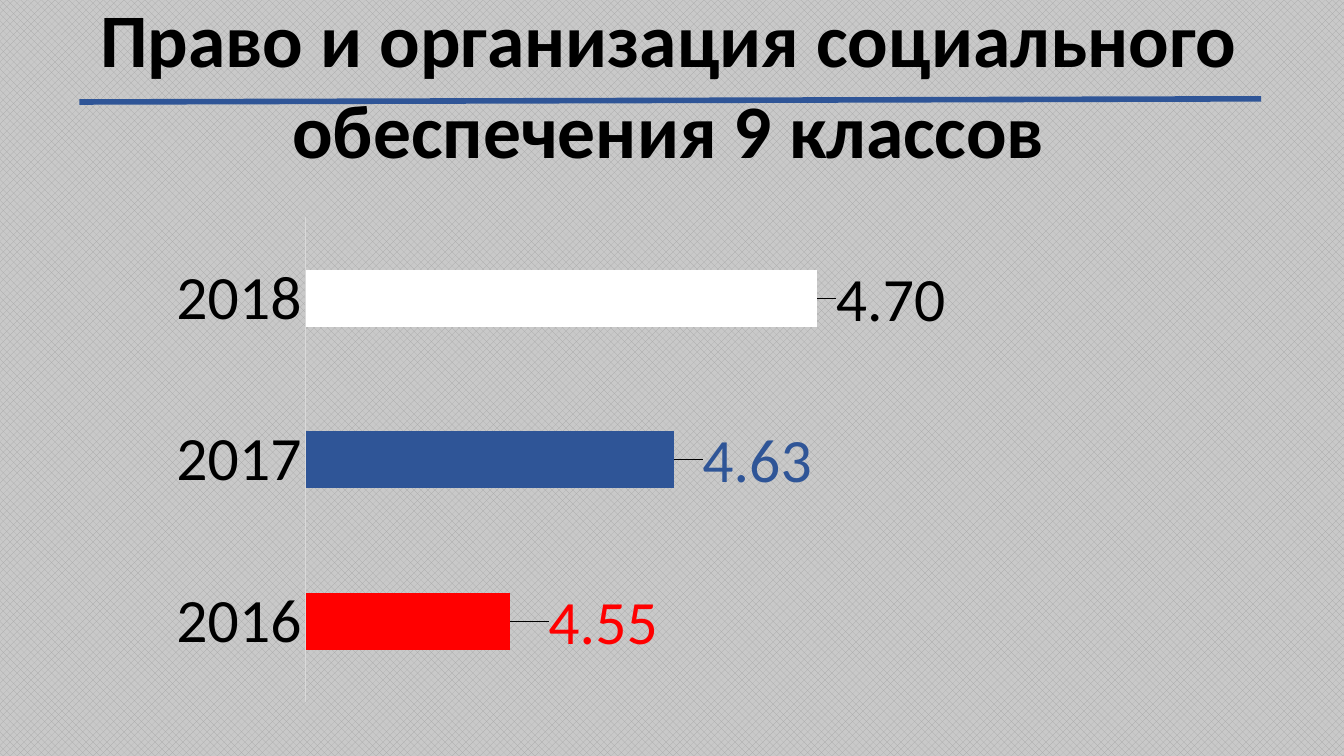
"""Builds a slide with a bar chart of average grades by year."""
from lxml import etree
from pptx import Presentation
from pptx.chart.data import CategoryChartData
from pptx.dml.color import RGBColor
from pptx.enum.chart import XL_CHART_TYPE, XL_LABEL_POSITION, XL_TICK_MARK
from pptx.enum.dml import MSO_PATTERN
from pptx.enum.shapes import MSO_CONNECTOR
from pptx.enum.text import MSO_AUTO_SIZE, PP_ALIGN
from pptx.oxml import parse_xml
from pptx.oxml.ns import qn
from pptx.util import Cm, Pt

BAR = XL_CHART_TYPE.BAR_CLUSTERED
OUTSIDE_END = XL_LABEL_POSITION.OUTSIDE_END
NO_TICK = XL_TICK_MARK.NONE
HALF_PATTERN = MSO_PATTERN.PERCENT_50
STRAIGHT = MSO_CONNECTOR.STRAIGHT
FIT_SHAPE = MSO_AUTO_SIZE.SHAPE_TO_FIT_TEXT
CENTER = PP_ALIGN.CENTER

CHART_NS = "http://schemas.openxmlformats.org/drawingml/2006/chart"
LEADER_LINES = (
    f'<c:extLst xmlns:c="{CHART_NS}">'
    '<c:ext uri="{CE6537A1-D6FC-4f65-9D91-7224C49458BB}" '
    'xmlns:c15="http://schemas.microsoft.com/office/drawing/2012/chart">'
    '<c15:showLeaderLines val="1"/></c:ext></c:extLst>'
)
BLACK = "000000"
BLUE = "2F5597"
GRADES = [
    ("2016", 4.55, "FF0000", 0.035),
    ("2017", 4.63, BLUE, 0.025),
    ("2018", 4.7, "FFFFFF", 0.015),
]


def color(value):
    return RGBColor.from_string(value)


def layout(**settings):
    items = "".join(f'<c:{name} val="{value}"/>' for name, value in settings.items())
    return parse_xml(
        f'<c:layout xmlns:c="{CHART_NS}"><c:manualLayout>{items}</c:manualLayout></c:layout>'
    )


class GradeSlide:
    def __init__(self, slide, font_name="Calibri"):
        self.slide = slide
        self.font_name = font_name

    def style_font(self, font, size, value, bold=False):
        font.name = self.font_name
        font.size = Pt(size)
        font.bold = bold
        font.color.rgb = color(value)

    def add_background(self, foreground, background):
        fill = self.slide.background.fill
        fill.patterned()
        fill.pattern = HALF_PATTERN
        fill.fore_color.rgb = color(foreground)
        fill.back_color.rgb = color(background)

    def add_line(self, start, end, value, width):
        line = self.slide.shapes.add_connector(
            STRAIGHT, Cm(start[0]), Cm(start[1]), Cm(end[0]), Cm(end[1])
        )
        line.line.color.rgb = color(value)
        line.line.width = Pt(width)
        etree.SubElement(line._element.spPr, qn("a:effectLst"))

    def add_title(self, text, left, top, width, height):
        box = self.slide.shapes.add_textbox(Cm(left), Cm(top), Cm(width), Cm(height))
        frame = box.text_frame
        frame.word_wrap = True
        frame.auto_size = FIT_SHAPE
        paragraph = frame.paragraphs[0]
        paragraph.alignment = CENTER
        run = paragraph.add_run()
        run.text = text
        self.style_font(run.font, 54, BLACK, bold=True)

    def add_grade_chart(self, grades, left, top, width, height):
        data = CategoryChartData(number_format="0.00")
        data.categories = [year for year, *_ in grades]
        data.add_series("Series 1", [grade for _, grade, *_ in grades])
        chart = self.slide.shapes.add_chart(
            BAR, Cm(left), Cm(top), Cm(width), Cm(height), data
        ).chart
        chart.has_legend = False
        chart.has_title = False
        self.style_font(chart.font, 10, BLACK)
        self.style_axes(chart)
        plot = chart.plots[0]
        plot.gap_width = 182
        plot.vary_by_categories = False
        self.style_bars(plot.series[0], grades)
        plot_area = chart._chartSpace.chart.plotArea
        for old_layout in plot_area.findall(qn("c:layout")):
            plot_area.remove(old_layout)
        plot_area.insert(0, layout(
            layoutTarget="inner", xMode="edge", yMode="edge",
            x=0.234, y=0.033, w=0.634, h=0.94,
        ))

    def style_axes(self, chart):
        years = chart.category_axis
        years.major_tick_mark = NO_TICK
        years.minor_tick_mark = NO_TICK
        years.has_major_gridlines = False
        years.format.line.color.rgb = color("D9D9D9")
        years.format.line.width = Pt(0.75)
        self.style_font(years.tick_labels.font, 44, BLACK)
        values = chart.value_axis
        values.minimum_scale = 4.45
        values.maximum_scale = 4.75
        values.has_major_gridlines = False
        values.visible = False

    def style_bars(self, series, grades):
        series.format.fill.solid()
        series.format.fill.fore_color.rgb = color("5B9BD5")
        series.invert_if_negative = False
        for index, (_, _, value, shift) in enumerate(grades):
            point = series.points[index]
            point.format.fill.solid()
            point.format.fill.fore_color.rgb = color(value)
            label = point.data_label
            self.style_font(label.font, 44, BLACK if value == "FFFFFF" else value)
            label.position = OUTSIDE_END
            element = series.data_labels._element.findall(qn("c:dLbl"))[index]
            element.insert(1, layout(x=shift, y=0.004))
        series.data_labels._element.append(parse_xml(LEADER_LINES))


def main():
    presentation = Presentation()
    presentation.slide_width = Cm(33.87)
    presentation.slide_height = Cm(19.05)
    page = GradeSlide(presentation.slides.add_slide(presentation.slide_layouts[6]))
    page.add_background("A6A6A6", "C9C9C9")
    page.add_line((2, 2.57), (31.78, 2.49), BLUE, 4)
    page.add_grade_chart(GRADES, 2, 5.05, 24.4, 13)
    page.add_title(
        "Право и организация социального обеспечения 9 классов", 1.55, -0.33, 30.6, 4.88
    )
    presentation.save("out.pptx")


if __name__ == "__main__":
    main()
